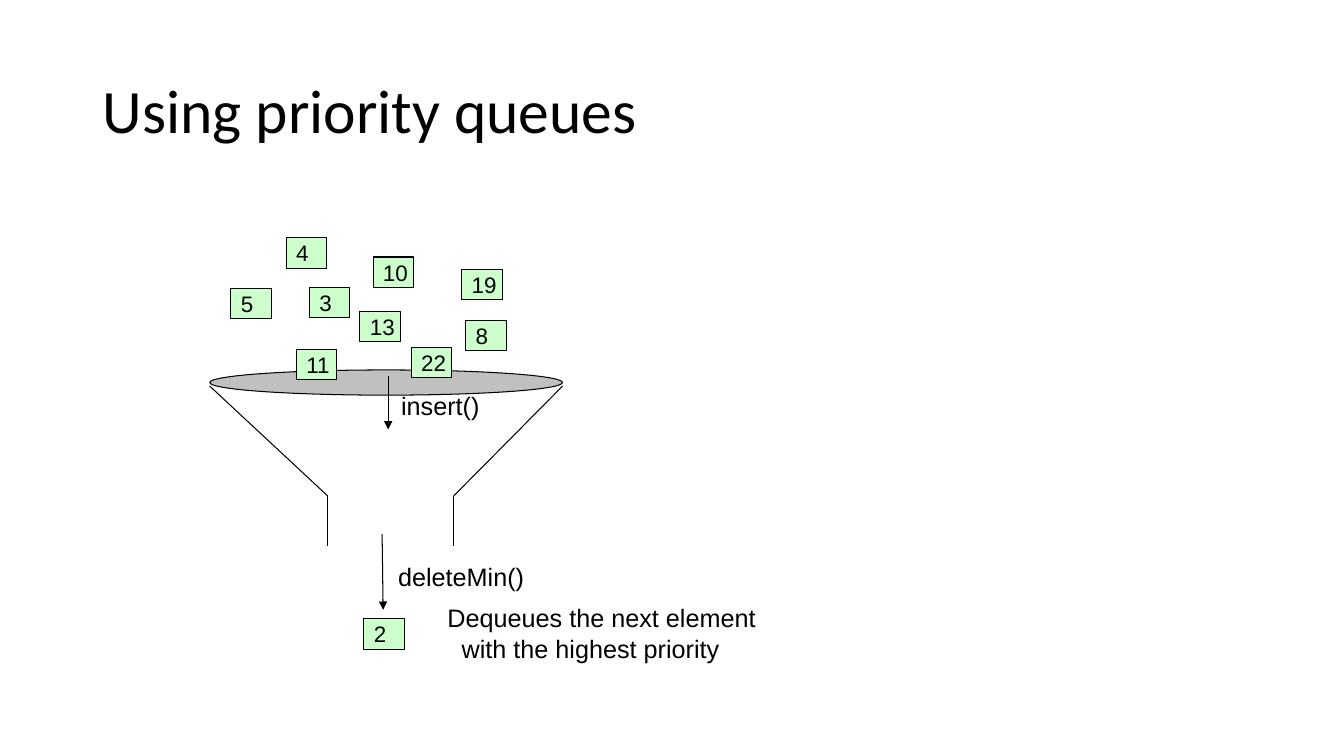
from lxml.etree import SubElement
from pptx import Presentation
from pptx.dml.color import RGBColor
from pptx.enum.shapes import MSO_CONNECTOR, MSO_SHAPE
from pptx.enum.text import MSO_ANCHOR, PP_ALIGN
from pptx.oxml.ns import qn
from pptx.util import Inches, Pt

BLACK = RGBColor(0x00, 0x00, 0x00)
GREY = RGBColor(0xC0, 0xC0, 0xC0)
GREEN = RGBColor(0xCC, 0xFF, 0xCC)

# Queue elements: value, left, top
WAITING = [
    (5, 2.29, 2.86), (3, 3.07, 2.85), (10, 3.7, 2.55),
    (13, 3.57, 3.09), (19, 4.58, 2.67), (8, 4.62, 3.18),
    (4, 2.84, 2.36), (22, 4.08, 3.45), (11, 2.94, 3.47),
]


def write(frame, text, size=18, font="Arial", anchor=MSO_ANCHOR.TOP, hanging=0):
    """Fill a text frame; lines after the first are indented by hanging inches."""
    frame.word_wrap = True
    frame.vertical_anchor = anchor
    paragraph = frame.paragraphs[0]
    paragraph.text = text
    paragraph.alignment = PP_ALIGN.LEFT
    if hanging:
        properties = paragraph._p.get_or_add_pPr()
        properties.set("marL", str(Inches(hanging)))
        properties.set("indent", str(-Inches(hanging)))
    paragraph.font.size = Pt(size)
    paragraph.font.name = font
    paragraph.font.color.rgb = BLACK
    return paragraph


def add_line(slide, start, end, arrow=False):
    line = slide.shapes.add_connector(
        MSO_CONNECTOR.STRAIGHT, *map(Inches, (*start, *end)))
    line.line.color.rgb = BLACK
    line.line.width = Pt(0.75)
    if arrow:
        SubElement(line.line._get_or_add_ln(), qn("a:tailEnd"), type="triangle")
    SubElement(line._element.spPr, qn("a:effectLst"))


def add_outlined(slide, kind, box, fill):
    shape = slide.shapes.add_shape(kind, *map(Inches, box))
    shape.shadow.inherit = False
    shape.fill.solid()
    shape.fill.fore_color.rgb = fill
    shape.line.color.rgb = BLACK
    shape.line.width = Pt(0.75)
    return shape


def add_label(slide, text, box, **text_format):
    label = slide.shapes.add_textbox(*map(Inches, box))
    write(label.text_frame, text, **text_format)


def add_title(slide, text, box):
    title = slide.shapes.title
    title.left, title.top, title.width, title.height = map(Inches, box)
    heading = write(title.text_frame, text, size=44, font="Calibri",
                    anchor=MSO_ANCHOR.MIDDLE)
    heading.line_spacing = 0.9


def add_funnel(slide, left, top, width, height):
    bottom = top + height
    rim, neck_top = top + 0.16, bottom - 0.5
    for edge, neck in ((left, left + 1.17), (left + width, left + 2.42)):
        add_line(slide, (edge, rim), (neck, neck_top))
        add_line(slide, (neck, neck_top), (neck, bottom))
    add_outlined(slide, MSO_SHAPE.OVAL, (left, top, width, 0.25), GREY)


def add_element(slide, value, left, top):
    element = add_outlined(slide, MSO_SHAPE.RECTANGLE, (left, top, 0.4, 0.3), GREEN)
    element.text_frame.margin_right = 0
    write(element.text_frame, str(value), size=16, anchor=MSO_ANCHOR.MIDDLE)


def add_insert(slide, left, top):
    add_line(slide, (left, top), (left, top + 0.53), arrow=True)
    add_label(slide, "insert()", (left + 0.03, top + 0.09, 0.98, 0.4))


def add_delete_min(slide, left, top):
    add_line(slide, (left + 0.18, top), (left + 0.19, top + 0.75), arrow=True)
    add_label(slide, "deleteMin()", (left + 0.24, top + 0.22, 1.45, 0.4))
    add_element(slide, 2, left, top + 0.84)
    add_label(slide, "Dequeues the next element\vwith the highest priority",
              (left + 0.73, top + 0.63, 3.36, 0.71), hanging=0.14)


def main():
    deck = Presentation()
    deck.slide_width, deck.slide_height = Inches(13.33), Inches(7.5)
    slide = deck.slides.add_slide(deck.slide_layouts[5])
    add_title(slide, "Using priority queues", (0.92, 0.4, 11.5, 1.45))
    add_funnel(slide, 2.08, 3.67, 3.5, 1.75)
    for value, left, top in WAITING:
        add_element(slide, value, left, top)
    add_delete_min(slide, 3.61, 5.3)
    add_insert(slide, 3.85, 3.73)
    deck.save("out.pptx")


if __name__ == "__main__":
    main()
